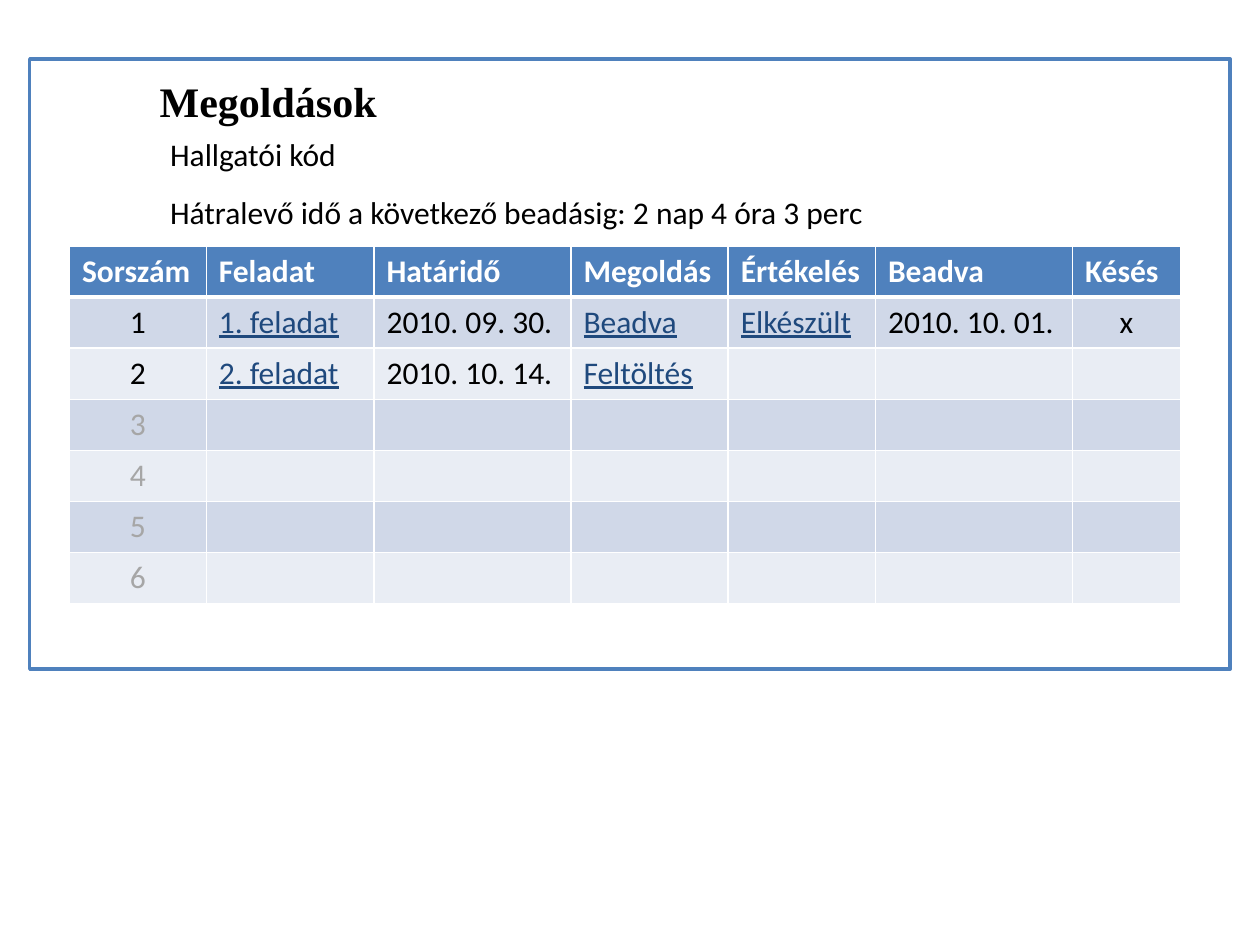
from lxml.etree import SubElement
from pptx import Presentation
from pptx.dml.color import RGBColor
from pptx.enum.shapes import MSO_SHAPE
from pptx.enum.text import PP_ALIGN
from pptx.oxml.ns import qn
from pptx.util import Cm, Pt

BLUE = RGBColor(0x4F, 0x81, 0xBD)
LINK = RGBColor(0x1F, 0x49, 0x7D)
BLACK = RGBColor(0, 0, 0)
WHITE = RGBColor(0xFF, 0xFF, 0xFF)
GREY = RGBColor(0xA6, 0xA6, 0xA6)
BANDS = [RGBColor(0xE9, 0xED, 0xF4), RGBColor(0xD0, 0xD8, 0xE8)]


def write(frame, text, size=18, font="Calibri", color=BLACK, bold=False,
          underline=False, align=PP_ALIGN.LEFT):
    paragraph = frame.paragraphs[0]
    paragraph.alignment = align
    run = paragraph.add_run()
    run.text = text
    run.font.size = Pt(size)
    run.font.name = font
    run.font.color.rgb = color
    run.font.bold = bold
    run.font.underline = underline


def set_borders(cell, **widths):
    """Draw white cell borders; keys are L, R, T, B and values are points."""
    properties = cell._tc.get_or_add_tcPr()
    for index, (side, width) in enumerate(widths.items()):
        line = SubElement(properties, qn(f"a:ln{side}"), w=str(Pt(width)))
        fill = SubElement(line, qn("a:solidFill"))
        SubElement(fill, qn("a:srgbClr"), val=str(WHITE))
        properties.insert(index, line)


prs = Presentation()
prs.slide_width, prs.slide_height = Cm(25.4), Cm(19.05)
slide = prs.slides.add_slide(prs.slide_layouts[6])

frame = slide.shapes.add_shape(
    MSO_SHAPE.RECTANGLE, Cm(0.6), Cm(1.19), Cm(24.2), Cm(12.3))
frame.shadow.inherit = False
frame.fill.background()
frame.line.color.rgb = BLUE
frame.line.width = Pt(2)

HEADINGS = [
    ("Megoldások", 2.97, 1.4, 5.56, 1.27,
     dict(size=24, font="Times New Roman", bold=True)),
    ("Hallgatói kód", 3.18, 2.59, 8.13, 1.02, {}),
    ("Hátralevő idő a következő beadásig: 2 nap 4 óra 3 perc",
     3.18, 3.76, 18.47, 1.02, {}),
]
for text, left, top, width, height, style in HEADINGS:
    box = slide.shapes.add_textbox(Cm(left), Cm(top), Cm(width), Cm(height))
    box.text_frame.word_wrap = True
    write(box.text_frame, text, **style)

COLUMN_WIDTHS = [2.76, 3.38, 3.97, 3.17, 2.97, 3.97, 2.18]
ROW_HEIGHT = 1.03
ROWS = [
    ["Sorszám", "Feladat", "Határidő", "Megoldás", "Értékelés", "Beadva", "Késés"],
    ["1", "1. feladat", "2010. 09. 30.", "Beadva", "Elkészült", "2010. 10. 01.", "x"],
    ["2", "2. feladat", "2010. 10. 14.", "Feltöltés", "", "", ""],
] + [[str(number)] + [""] * 6 for number in range(3, 7)]
LINK_COLUMNS = (1, 3, 4)
CENTRED_COLUMNS = (0, 6)
LAST_OPEN_ROW = 2

solutions = slide.shapes.add_table(
    len(ROWS), len(COLUMN_WIDTHS), Cm(1.4), Cm(4.96),
    Cm(sum(COLUMN_WIDTHS)), Cm(ROW_HEIGHT * len(ROWS))).table
for column, width in zip(solutions.columns, COLUMN_WIDTHS):
    column.width = Cm(width)

for r, texts in enumerate(ROWS):
    solutions.rows[r].height = Cm(ROW_HEIGHT)
    for c, text in enumerate(texts):
        cell = solutions.cell(r, c)
        cell.fill.solid()
        cell.fill.fore_color.rgb = BANDS[r % 2] if r else BLUE
        set_borders(cell, L=1, R=1, T=3 if r == 1 else 1, B=1 if r else 3)
        if not text:
            cell.text_frame.paragraphs[0].font.size = Pt(18)
        elif r == 0:
            write(cell.text_frame, text, color=WHITE, bold=True)
        elif c in LINK_COLUMNS:
            write(cell.text_frame, text, color=LINK, underline=True)
        else:
            write(cell.text_frame, text,
                  color=BLACK if r <= LAST_OPEN_ROW else GREY,
                  align=PP_ALIGN.CENTER if c in CENTRED_COLUMNS else PP_ALIGN.LEFT)

prs.save("out.pptx")
